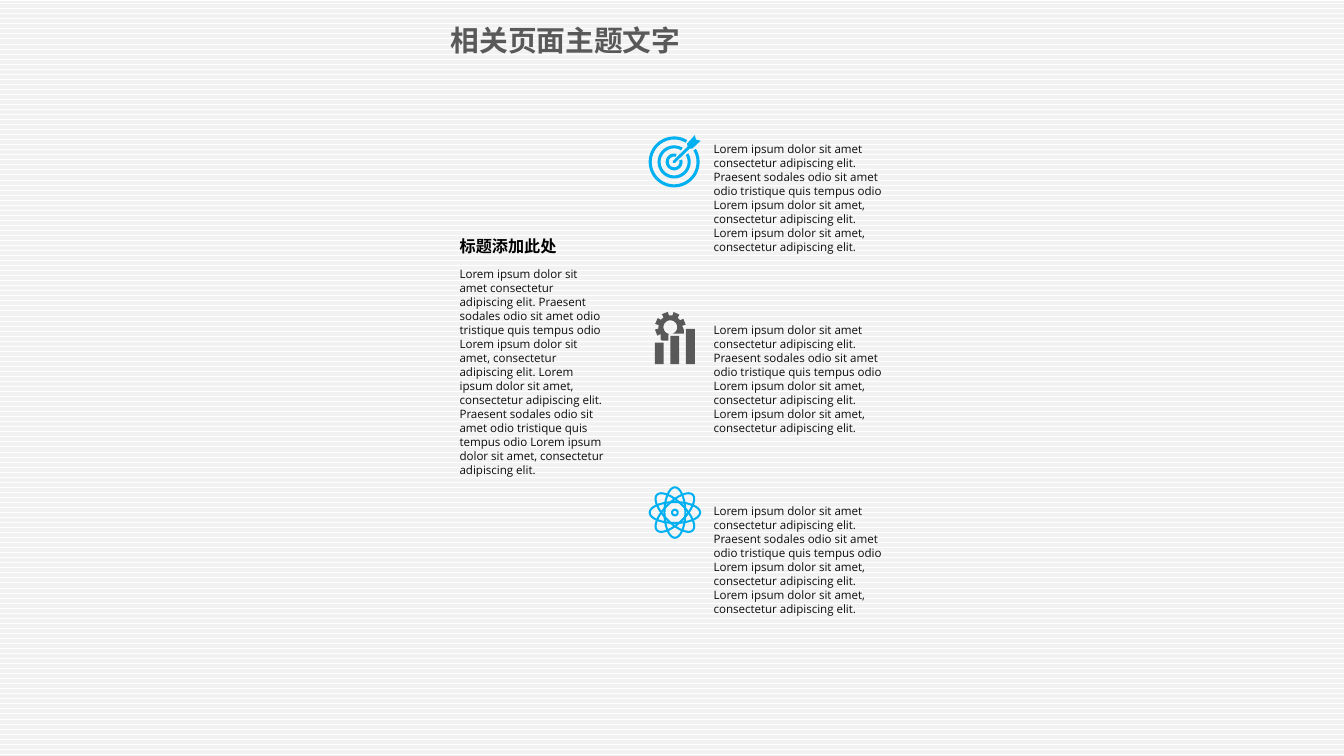
from dataclasses import dataclass
from math import cos, radians, sin

from lxml.etree import SubElement
from pptx import Presentation
from pptx.dml.color import RGBColor
from pptx.enum.dml import MSO_PATTERN
from pptx.enum.shapes import MSO_SHAPE
from pptx.enum.text import MSO_ANCHOR, MSO_AUTO_SIZE, PP_ALIGN
from pptx.oxml.ns import qn
from pptx.shapes.base import BaseShape
from pptx.slide import Slide
from pptx.util import Cm, Pt

Point = tuple[float, float]
Contour = list[Point]


@dataclass(frozen=True)
class Theme:
    blue: RGBColor = RGBColor(0x00, 0xB0, 0xF0)
    gray: RGBColor = RGBColor(0x59, 0x59, 0x59)
    black: RGBColor = RGBColor(0x00, 0x00, 0x00)
    ink: RGBColor = RGBColor(0x0D, 0x0D, 0x0D)
    stripe: RGBColor = RGBColor(0xF2, 0xF2, 0xF2)
    white: RGBColor = RGBColor(0xFF, 0xFF, 0xFF)
    chinese_font: str = "Noto Sans CJK SC"
    heading_font: str = "Calibri"
    body_font: str = "Open Sans"
    title_size: float = 32
    heading_size: float = 18
    body_size: float = 12.9
    title_leading: float = 38.4
    body_leading: float = 15.6


THEME = Theme()


@dataclass(frozen=True)
class TextBlock:
    """A block of text; lengths in centimetres, type in points."""
    text: str
    left: float
    top: float
    width: float
    height: float
    font: str = THEME.body_font
    size: float = THEME.body_size
    color: RGBColor = THEME.ink
    bold: bool = False
    leading: float | None = THEME.body_leading


@dataclass(frozen=True)
class Icon:
    """Contours in centimetres around a centre; stroked if stroke is set."""
    center: Point
    contours: list[Contour]
    color: RGBColor
    stroke: float | None = None


# Texts
OPENING = ("Lorem ipsum dolor sit amet consectetur adipiscing elit. Praesent sodales odio sit amet "
           "odio tristique quis tempus odio Lorem ipsum dolor sit amet, consectetur adipiscing elit.")
CLOSING = "Lorem ipsum dolor sit amet, consectetur adipiscing elit."
POINT_TEXT = f"{OPENING} {CLOSING}"
INTRO_TEXT = (f"{POINT_TEXT} Praesent sodales odio sit amet odio tristique quis tempus odio "
              f"{CLOSING}")

TITLE = TextBlock("相关页面主题文字", 17.45, 0.76, 11.94, 1.63, THEME.chinese_font,
                  THEME.title_size, THEME.gray, True, THEME.title_leading)
HEADING = TextBlock("标题添加此处", 17.81, 9.14, 6.17, 1.02, THEME.heading_font,
                    THEME.heading_size, THEME.black, True, None)
INTRO = TextBlock(INTRO_TEXT, 17.81, 10.34, 6.17, 7.67)
POINTS = [TextBlock(POINT_TEXT, 27.79, 5.46 + 7.11 * row, 7.19, 4.83) for row in range(3)]


# Icon geometry
def arc(rx: float, ry: float, start: float = 0, end: float = 360, tilt: float = 0) -> Contour:
    steps = 60
    angles = [radians(start + (end - start) * step / steps) for step in range(steps + 1)]
    turn = radians(tilt)
    return [(rx * cos(a) * cos(turn) - ry * sin(a) * sin(turn),
             -rx * cos(a) * sin(turn) - ry * sin(a) * cos(turn)) for a in angles]


def open_ring(outer: float, inner: float, half_gap: float) -> Contour:
    """A ring with a gap towards the upper right."""
    start, end = 45 + half_gap, 405 - half_gap
    return arc(outer, outer, start, end) + arc(inner, inner, end, start)


def target() -> list[Contour]:
    arrow = [(0.81, -1.05), (0.86, -0.88), (1.04, -0.83), (0.71, -0.52), (0.61, -0.52),
             (0.03, 0.04), (-0.05, 0.04), (-0.05, -0.04), (0.53, -0.6), (0.51, -0.72)]
    return [open_ring(1, 0.88, 14), open_ring(0.65, 0.53, 14), open_ring(0.33, 0.21, 28), arrow]


def gear_with_bars() -> list[Contour]:
    tip, root, hole = 0.61, 0.47, 0.27
    gear: Contour = []
    for tooth in range(5):
        middle = radians(21 + 45 * tooth)
        for radius, offset in ((root, -14), (tip, -12), (tip, 12), (root, 14)):
            angle = middle + radians(offset)
            gear.append((radius * cos(angle), -radius * sin(angle)))
    gear += [(-0.38, 0.3), (-0.38, 0.48), (-0.33, 0.53), (-0.08, 0.53)]
    gear += arc(hole, hole, 255, -68) + [(0.53, 0.25), (0.53, 0.1)]
    bars = []
    for bar in range(3):
        left, top = -0.61 + 0.61 * bar, 0.61 - 0.27 * bar
        right, bottom = left + 0.35, 1.45
        bars.append([(left, top), (right, top), (right, bottom), (left, bottom)])
    return [gear, *bars]


def atom() -> list[Contour]:
    orbits = [arc(0.99, 0.41, tilt=45 * orbit) for orbit in range(4)]
    return [*orbits, arc(0.11, 0.11)]


ICONS = [
    Icon((26.49, 6.36), target(), THEME.blue),
    Icon((26.34, 12.85), gear_with_bars(), THEME.gray),
    Icon((26.52, 20.13), atom(), THEME.blue, stroke=0.08),
]


# Drawing
def draw_background(slide: Slide) -> None:
    backdrop = slide.shapes.add_shape(MSO_SHAPE.RECTANGLE, Cm(-0.1), Cm(0), Cm(52.91), Cm(30.12))
    backdrop.shadow.inherit = False
    backdrop.line.fill.background()
    backdrop.fill.patterned()
    backdrop.fill.pattern = MSO_PATTERN.NARROW_HORIZONTAL
    backdrop.fill.fore_color.rgb = THEME.stripe
    backdrop.fill.back_color.rgb = THEME.white
    slide.shapes.element.insert(2, backdrop.element)  # behind the title


def write_text(holder: BaseShape, block: TextBlock) -> None:
    holder.left, holder.top = Cm(block.left), Cm(block.top)
    holder.width, holder.height = Cm(block.width), Cm(block.height)
    frame = holder.text_frame
    frame.word_wrap = True
    frame.auto_size = MSO_AUTO_SIZE.SHAPE_TO_FIT_TEXT
    frame.vertical_anchor = MSO_ANCHOR.TOP
    paragraph = frame.paragraphs[0]
    paragraph.alignment = PP_ALIGN.LEFT
    if block.leading:
        paragraph.line_spacing = Pt(block.leading)
    run = paragraph.add_run()
    run.text = block.text
    run.font.name = block.font
    run.font.size = Pt(block.size)
    run.font.bold = block.bold
    run.font.color.rgb = block.color
    east_asian = SubElement(run.font._element, qn("a:ea"))
    east_asian.set("typeface", THEME.chinese_font)


def add_text(slide: Slide, block: TextBlock) -> None:
    write_text(slide.shapes.add_textbox(0, 0, 0, 0), block)


def draw_icon(slide: Slide, icon: Icon) -> None:
    center_x, center_y = icon.center
    placed = [[(Cm(center_x + x), Cm(center_y + y)) for x, y in contour]
              for contour in icon.contours]
    builder = slide.shapes.build_freeform(*placed[0][0])
    for contour in placed:
        builder.move_to(*contour[0])
        builder.add_line_segments(contour[1:], close=True)
    symbol = builder.convert_to_shape()
    symbol.shadow.inherit = False
    if icon.stroke:
        symbol.fill.background()
        symbol.line.color.rgb = icon.color
        symbol.line.width = Cm(icon.stroke)
    else:
        symbol.fill.solid()
        symbol.fill.fore_color.rgb = icon.color
        symbol.line.fill.background()


def main() -> None:
    deck = Presentation()
    deck.slide_width, deck.slide_height = Cm(52.81), Cm(29.69)
    slide = deck.slides.add_slide(deck.slide_layouts[5])
    draw_background(slide)
    write_text(slide.shapes.title, TITLE)
    for icon in ICONS:
        draw_icon(slide, icon)
    for block in (HEADING, INTRO, *POINTS):
        add_text(slide, block)
    deck.save("out.pptx")


if __name__ == "__main__":
    main()
